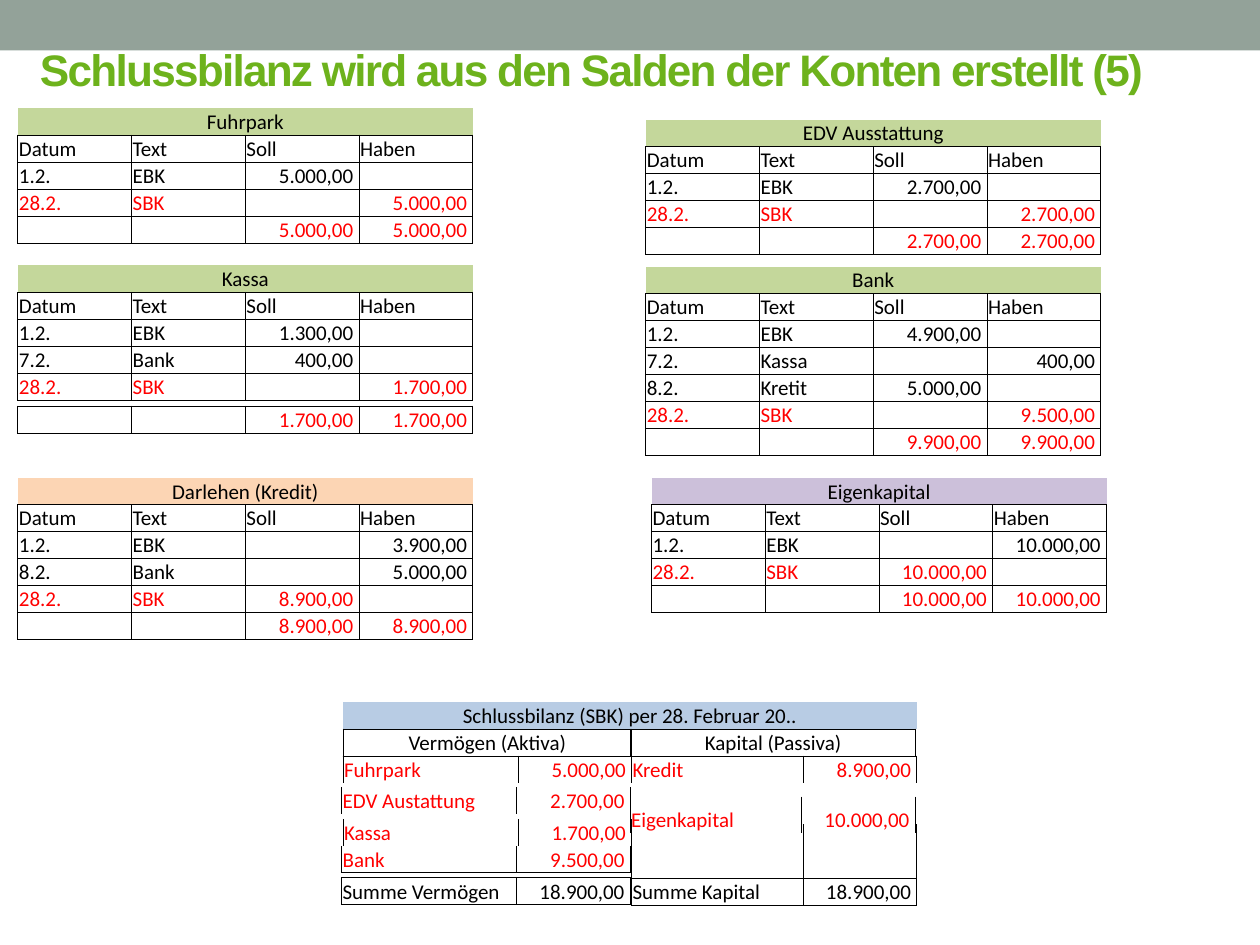
"""Builds the slide that closes the ledger accounts into the final balance sheet."""
from lxml import etree
from pptx import Presentation
from pptx.dml.color import RGBColor
from pptx.enum.shapes import MSO_SHAPE
from pptx.enum.text import MSO_ANCHOR, PP_ALIGN
from pptx.oxml.ns import qn
from pptx.util import Pt

RECTANGLE = MSO_SHAPE.RECTANGLE
MIDDLE, BOTTOM = MSO_ANCHOR.MIDDLE, MSO_ANCHOR.BOTTOM
LEFT, CENTER, RIGHT = PP_ALIGN.LEFT, PP_ALIGN.CENTER, PP_ALIGN.RIGHT

COLOURS = {
    "band": "93A299", "title": "6DB21C", "black": "000000", "red": "FF0000",
    "asset": "C4D79B", "debt": "FCD5B4", "equity": "CCC0DA", "balance": "B8CCE4",
}
ROW_HEIGHT = 15.4
ACCOUNT_COLUMNS = [65] * 4
ASSET_COLUMNS = [100, 65]
CAPITAL_COLUMNS = [98, 65]
HEADINGS = "Datum|Text|Soll|Haben"
CLOSING_DATES = ("28.2.", "")
CELL_FORMAT = {
    "margin_left": Pt(0.6), "margin_right": Pt(0.6), "margin_top": Pt(0.6),
    "margin_bottom": Pt(0), "vertical_anchor": BOTTOM,
}

ACCOUNTS = [
    (369, 68.4, "EDV Ausstattung", "asset",
     ["1.2.|EBK|2.700,00|", "28.2.|SBK||2.700,00", "||2.700,00|2.700,00"]),
    (372.3, 273, "Eigenkapital", "equity",
     ["1.2.|EBK||10.000,00", "28.2.|SBK|10.000,00|", "||10.000,00|10.000,00"]),
    (10.2, 61.8, "Fuhrpark", "asset", ["1.2.|EBK|5.000,00|"]),
    (10.2, 151.6, "Kassa", "asset", ["1.2.|EBK|1.300,00|", "7.2.|Bank|400,00|"]),
    (369, 152.3, "Bank", "asset",
     ["1.2.|EBK|4.900,00|", "7.2.|Kassa||400,00", "8.2.|Kretit|5.000,00|",
      "28.2.|SBK||9.500,00", "||9.900,00|9.900,00"]),
    (10.2, 273, "Darlehen (Kredit)", "debt",
     ["1.2.|EBK||3.900,00", "8.2.|Bank||5.000,00", "28.2.|SBK|8.900,00|",
      "||8.900,00|8.900,00"]),
]
CLOSING_ROWS = [
    (108.3, "28.2.|SBK||5.000,00"), (123.7, "||5.000,00|5.000,00"),
    (213.4, "28.2.|SBK||1.700,00"), (232, "||1.700,00|1.700,00"),
]
BALANCE_ROWS = [
    (196, 432, ASSET_COLUMNS, "Fuhrpark|5.000,00", "LRT", "red", ROW_HEIGHT),
    (195.2, 449.6, ASSET_COLUMNS, "EDV Austattung|2.700,00", "LR", "red", ROW_HEIGHT),
    (196, 468, ASSET_COLUMNS, "Kassa|1.700,00", "LR", "red", ROW_HEIGHT),
    (195.2, 483.3, ASSET_COLUMNS, "Bank|9.500,00", "LRB", "red", ROW_HEIGHT),
    (195.2, 501.6, ASSET_COLUMNS, "Summe Vermögen|18.900,00", "LRTB", "black", ROW_HEIGHT),
    (360.9, 432, CAPITAL_COLUMNS, "Kredit|8.900,00", "LRT", "red", ROW_HEIGHT),
    (360, 455.2, CAPITAL_COLUMNS, "Eigenkapital|10.000,00", "LR", "red", 21),
]


def set_format(target, values):
    """Set every attribute named in a dict of format values."""
    for name, value in values.items():
        setattr(target, name, value)


def colour(name):
    """Return the named colour."""
    return RGBColor.from_string(COLOURS[name])


def add_band(page):
    """Draw the band along the top edge."""
    band = page.shapes.add_shape(RECTANGLE, Pt(0), Pt(0), Pt(720), Pt(28.8))
    band.shadow.inherit = False
    band.fill.solid()
    band.fill.fore_color.rgb = colour("band")
    band.line.fill.background()


def add_title(page, text):
    """Place the slide title."""
    box = page.shapes.add_textbox(Pt(15.8), Pt(21.6), Pt(648), Pt(36))
    set_format(box.text_frame, {"word_wrap": True, "vertical_anchor": MIDDLE})
    span = box.text_frame.paragraphs[0].add_run()
    span.text = text
    set_format(span.font, {"name": "Arial", "size": Pt(25.2), "bold": True})
    span.font.color.rgb = colour("title")
    span.font._element.set("spc", "-100")


def set_borders(cell, edges):
    """Draw thin black lines on the given edges and clear the others."""
    properties = cell._tc.get_or_add_tcPr()
    for edge in "LRTB":
        line = etree.SubElement(properties, qn(f"a:ln{edge}"), w=str(Pt(0.5)))
        if edge in edges:
            fill = etree.SubElement(line, qn("a:solidFill"))
            etree.SubElement(fill, qn("a:srgbClr"), val=COLOURS["black"])
        else:
            etree.SubElement(line, qn("a:noFill"))


def write_cell(cell, text, ink, align):
    """Write a cell, with amounts to the right and padded by a space."""
    para = cell.text_frame.paragraphs[0]
    if not text:
        para._p.get_or_add_endParaRPr().set("sz", "1200")
        return
    amount = text.endswith(",00")
    para.alignment = RIGHT if amount else align
    span = para.add_run()
    span.text = f" {text} " if amount else text
    set_format(span.font, {"name": "Calibri", "size": Pt(12), "bold": False})
    span.font.color.rgb = colour(ink)


def add_grid(page, left, top, columns, rows, height=ROW_HEIGHT, align=LEFT):
    """Add a table from rows of (text, edges, ink, fill)."""
    frame = page.shapes.add_table(len(rows), len(columns), Pt(left), Pt(top),
                                  Pt(sum(columns)), Pt(height * len(rows)))
    table = frame.table
    set_format(table, {"first_row": False, "horz_banding": False})
    for column, width in zip(table.columns, columns):
        column.width = Pt(width)
    for index, (line, edges, ink, fill) in enumerate(rows):
        table.rows[index].height = Pt(height)
        texts = line.split("|")
        merged = len(texts) < len(columns)
        texts += [""] * (len(columns) - len(texts))
        for cell, text in zip(table.rows[index].cells, texts):
            set_format(cell, CELL_FORMAT)
            set_borders(cell, edges)
            if fill:
                cell.fill.solid()
                cell.fill.fore_color.rgb = colour(fill)
            else:
                cell.fill.background()
            write_cell(cell, text, ink, CENTER if merged else align)
        if merged:
            table.cell(index, 0).merge(table.cell(index, len(columns) - 1))


def entry(line):
    """Return a boxed account row, red when it closes the account."""
    ink = "red" if line.split("|")[0] in CLOSING_DATES else "black"
    return line, "LRTB", ink, None


def add_account(page, left, top, name, fill, lines):
    """Add a ledger account with its name, headings and entries."""
    rows = [(name, "B", "black", fill)] + [entry(line) for line in [HEADINGS] + lines]
    add_grid(page, left, top, ACCOUNT_COLUMNS, rows)


def add_balance(page):
    """Add the final balance sheet."""
    add_grid(page, 196, 401.2, [328],
             [("Schlussbilanz (SBK) per 28. Februar 20..", "", "black", "balance")],
             align=CENTER)
    for left, width, text in [(196, 165, "Vermögen (Aktiva)"),
                              (360.3, 163, "Kapital (Passiva)")]:
        add_grid(page, left, 416.6, [width], [(text, "LRTB", "black", None)], align=CENTER)
    for left, top, columns, line, edges, ink, height in BALANCE_ROWS:
        add_grid(page, left, top, columns, [(line, edges, ink, None)], height)
    add_grid(page, 360.9, 471, CAPITAL_COLUMNS,
             [("|", "LR", "black", None), ("|", "LRB", "black", None),
              ("Summe Kapital|18.900,00", "LRTB", "black", None)])


def main():
    """Build and save the deck."""
    deck = Presentation()
    set_format(deck, {"slide_width": Pt(720), "slide_height": Pt(540)})
    page = deck.slides.add_slide(deck.slide_layouts[6])
    add_band(page)
    add_title(page, "Schlussbilanz wird aus den Salden der Konten erstellt (5)")
    add_balance(page)
    for account in ACCOUNTS:
        add_account(page, *account)
    for top, line in CLOSING_ROWS:
        add_grid(page, 10.2, top, ACCOUNT_COLUMNS, [entry(line)])
    deck.save("out.pptx")


if __name__ == "__main__":
    main()
